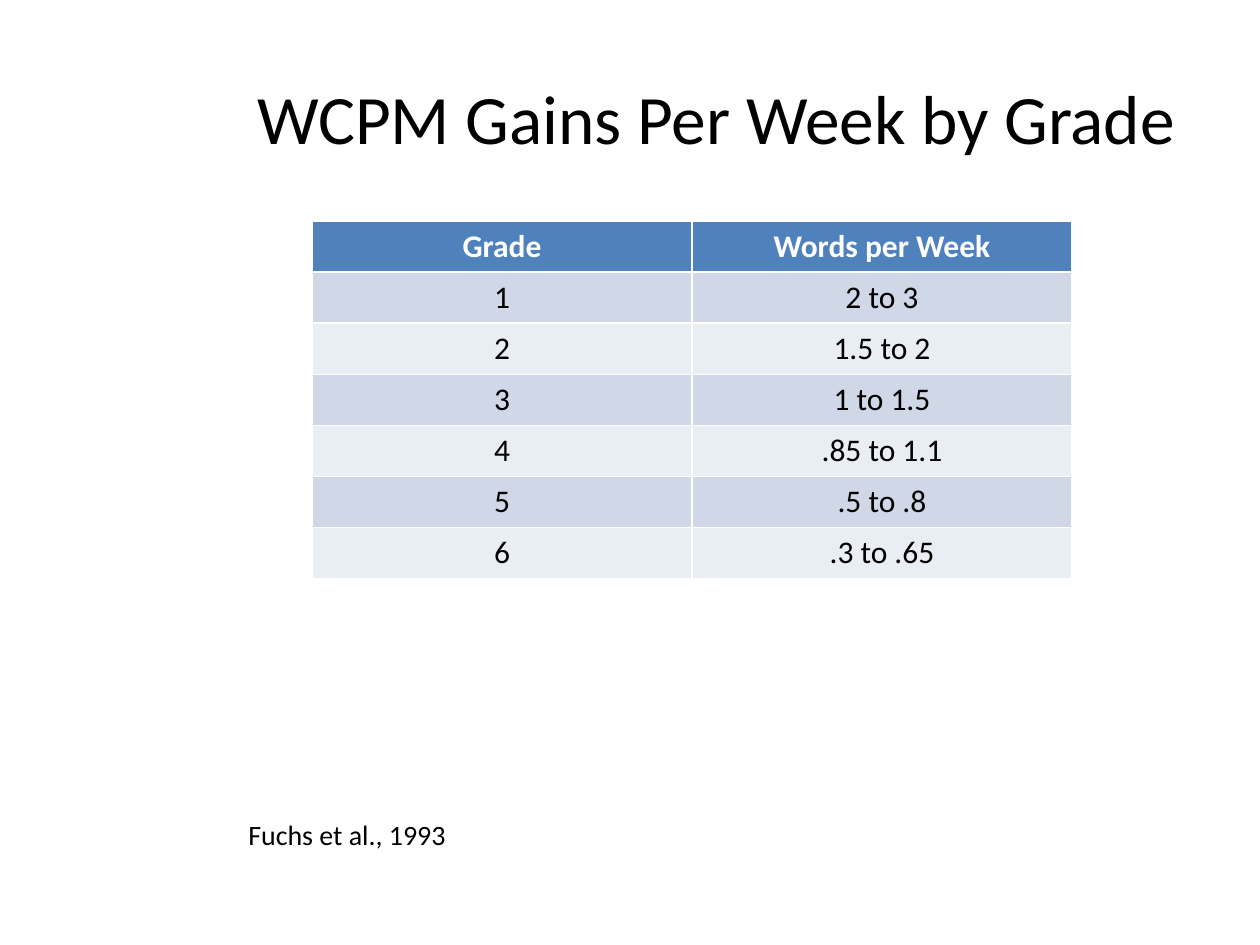
from pptx import Presentation, util as u
from pptx.dml.color import RGBColor
from pptx.enum import text


def px(n):
    return u.Emu(round(n * 914400 / 126))


def style(p, size, color, bold=False, align=text.PP_ALIGN.CENTER):
    p.alignment = align
    for r in p.runs:
        r.font.name = "Calibri"
        r.font.size = u.Pt(size)
        r.font.bold = bold
        r.font.color.rgb = RGBColor.from_string(color)


prs = Presentation()
prs.slide_width, prs.slide_height = px(1260), px(945)
s = prs.slides.add_slide(prs.slide_layouts[5])

title = s.shapes.title
title.left, title.top, title.width, title.height = px(236), px(38), px(961), px(157)
tf = title.text_frame
tf.text = "WCPM Gains Per Week by Grade"
tf.auto_size = text.MSO_AUTO_SIZE.NONE
tf.vertical_anchor = text.MSO_ANCHOR.MIDDLE
style(tf.paragraphs[0], 39.6, "000000")

rows = [
    ("Grade", "Words per Week"),
    ("1", "2 to 3"),
    ("2", "1.5 to 2"),
    ("3", "1 to 1.5"),
    ("4", ".85 to 1.1"),
    ("5", ".5 to .8"),
    ("6", ".3 to .65"),
]
row_h = 51
table = s.shapes.add_table(len(rows), 2, px(312), px(221), px(760), px(row_h * len(rows))).table
for i, row in enumerate(rows):
    table.rows[i].height = px(row_h)
    header = i == 0
    fill = "4F81BD" if header else ("E9EDF4", "D0D8E8")[i % 2]
    for j, value in enumerate(row):
        cell = table.cell(i, j)
        cell.text_frame.text = value
        cell.fill.solid()
        cell.fill.fore_color.rgb = RGBColor.from_string(fill)
        style(cell.text_frame.paragraphs[0], 18, "FFFFFF" if header else "000000", header)

source = s.shapes.add_textbox(px(236), px(811), px(226), px(47))
tf = source.text_frame
tf.text = "Fuchs et al., 1993"
tf.word_wrap = False
tf.auto_size = text.MSO_AUTO_SIZE.SHAPE_TO_FIT_TEXT
style(tf.paragraphs[0], 16, "000000", align=text.PP_ALIGN.LEFT)

prs.save("out.pptx")
